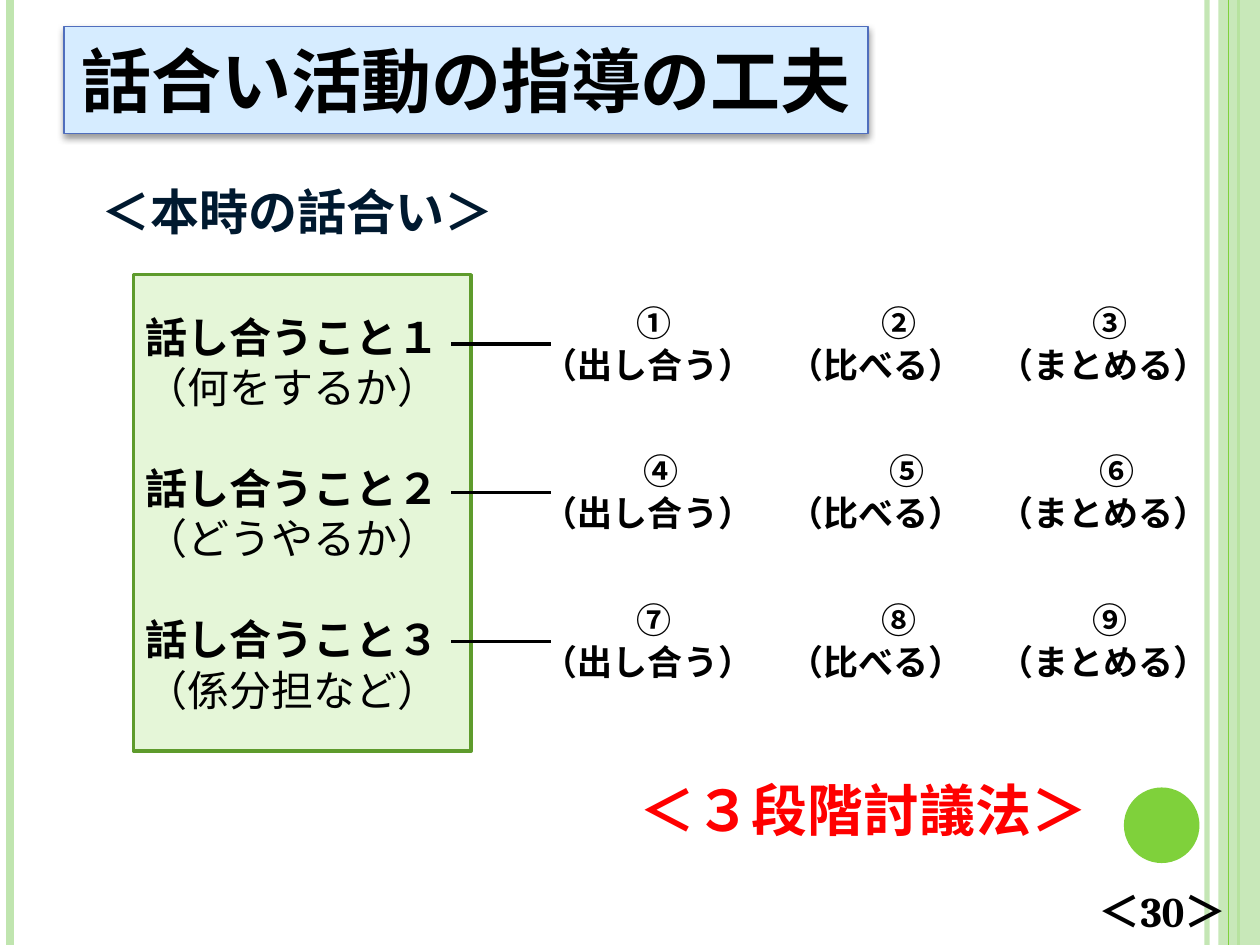
import pptx
import pptx.dml.color
import pptx.enum.shapes
import pptx.enum.text
import pptx.oxml.ns
import pptx.util
from lxml import etree
from pptx.util import Inches, Pt

RGBColor = pptx.dml.color.RGBColor
BLACK = RGBColor(0x00, 0x00, 0x00)
RED = RGBColor(0xFF, 0x00, 0x00)
NAVY = RGBColor(0x00, 0x19, 0x2F)
PALE_GREEN = RGBColor(0xC0, 0xE5, 0xAF)
BRIGHT_GREEN = RGBColor(0x7F, 0xD1, 0x3B)
PANEL_FILL = RGBColor(0xE5, 0xF6, 0xD8)
PANEL_LINE = RGBColor(0x5E, 0x9B, 0x2C)
TITLE_FILL = RGBColor(0xD6, 0xEC, 0xFF)
TITLE_LINE = RGBColor(0x50, 0x6E, 0xBD)

GOTHIC = "Noto Sans CJK JP"
SERIF = "Cambria"
LINE_RATIO = 1.2
SHAPE = pptx.enum.shapes.MSO_SHAPE
MIDDLE = pptx.enum.text.MSO_ANCHOR.MIDDLE
TOP = pptx.enum.text.MSO_ANCHOR.TOP
LEFT = pptx.enum.text.PP_ALIGN.LEFT
CENTER = pptx.enum.text.PP_ALIGN.CENTER

TOPICS = [
    ("話し合うこと１", "（何をするか）"),
    ("話し合うこと２", "（どうやるか）"),
    ("話し合うこと３", "（係分担など）"),
]
STAGES = "（出し合う）\u3000（比べる）\u3000（まとめる）"
STAGE_ROWS = [("①②③", 0), ("④⑤⑥", 0.06), ("⑦⑧⑨", 0)]
STAGE_CENTERS = [0.88, 2.83, 4.5]
ROW_PITCH = 1.18


def add_child(parent, tag, **attributes):
    return etree.SubElement(parent, pptx.oxml.ns.qn(tag), attributes)


def set_opacity(element, percent):
    for color in element.iter(pptx.oxml.ns.qn("a:srgbClr")):
        add_child(color, "a:alpha", val=str(percent * 1000))


def add_line(page, start, end, color, width):
    line = page.shapes.add_connector(
        pptx.enum.shapes.MSO_CONNECTOR.STRAIGHT,
        *[Inches(value) for value in (*start, *end)])
    line.line.color.rgb = color
    line.line.width = Pt(width)
    add_child(line._element.spPr, "a:effectLst")
    return line


def add_block(page, kind, area, fill, line_color=None, line_width=1):
    block = page.shapes.add_shape(kind, *[Inches(value) for value in area])
    block.shadow.inherit = False
    block.fill.solid()
    block.fill.fore_color.rgb = fill
    if line_color is None:
        block.line.fill.background()
    else:
        block.line.color.rgb = line_color
        block.line.width = Pt(line_width)
    return block


def add_shadow(block):
    effects = block._element.spPr.find(pptx.oxml.ns.qn("a:effectLst"))
    shadow = add_child(effects, "a:outerShdw", blurRad=str(Pt(4)),
                       dist=str(Pt(2)), dir="5400000", rotWithShape="0")
    add_child(shadow, "a:srgbClr", val=str(BLACK))
    set_opacity(shadow, 40)


def add_text_box(page, area, anchor=TOP):
    box = page.shapes.add_textbox(*[Inches(value) for value in area])
    box.text_frame.word_wrap = True
    box.text_frame.vertical_anchor = anchor
    return box


def write_paragraph(para, text, size, color=BLACK, bold=True, align=LEFT, font=GOTHIC):
    para.add_run().text = text
    para.alignment = align
    para.line_spacing = Pt(size * LINE_RATIO)
    para.font.name = font
    para.font.size = Pt(size)
    para.font.bold = bold
    para.font.color.rgb = color
    defaults = para._p.pPr.find(pptx.oxml.ns.qn("a:defRPr"))
    add_child(defaults, "a:ea", typeface=GOTHIC)


def add_center_tabs(para, positions):
    defaults = para._p.pPr.find(pptx.oxml.ns.qn("a:defRPr"))
    tabs = etree.Element(pptx.oxml.ns.qn("a:tabLst"))
    for position in positions:
        add_child(tabs, "a:tab", pos=str(Inches(position)), algn="ctr")
    defaults.addprevious(tabs)


def add_label(page, area, text, size, color=BLACK, align=CENTER, font=GOTHIC, anchor=TOP):
    box = add_text_box(page, area, anchor)
    write_paragraph(box.text_frame.paragraphs[0], text, size, color, align=align, font=font)


def add_frame(page):
    edge = add_line(page, (9.58, 0), (9.58, 7.5), PALE_GREEN, 3)
    set_opacity(edge._element.spPr, 93)
    add_line(page, (0.08, 0), (0.08, 7.5), PALE_GREEN, 4.5)
    add_line(page, (9.83, 0), (9.83, 7.5), BRIGHT_GREEN, 1.5)
    band = add_block(page, SHAPE.RECTANGLE, (9.67, 0, 0.33, 7.5), PALE_GREEN)
    set_opacity(band._element.spPr, 87)
    add_line(page, (9.75, 0), (9.75, 7.5), BRIGHT_GREEN, 0.75)
    add_block(page, SHAPE.OVAL, (8.92, 6.25, 0.6, 0.6), BRIGHT_GREEN)


def add_title(page):
    title = add_block(page, SHAPE.RECTANGLE, (0.51, 0.21, 6.38, 0.85),
                      TITLE_FILL, TITLE_LINE)
    add_shadow(title)
    title.text_frame.vertical_anchor = MIDDLE
    write_paragraph(title.text_frame.paragraphs[0], "話合い活動の指導の工夫", 40, align=CENTER)


def add_topic_panel(page):
    panel = add_block(page, SHAPE.RECTANGLE, (1.06, 2.18, 2.68, 3.78),
                      PANEL_FILL, PANEL_LINE, 2)
    frame = panel.text_frame
    frame.vertical_anchor = MIDDLE
    for index, (topic, detail) in enumerate(TOPICS):
        heading = frame.add_paragraph() if index else frame.paragraphs[0]
        write_paragraph(heading, topic, 24)
        if index:
            heading.space_before = Pt(24 * LINE_RATIO)
        write_paragraph(frame.add_paragraph(), detail, 24, bold=False)


def add_stage_row(page, index, numbers, shift):
    offset = index * ROW_PITCH
    add_line(page, (3.58, 2.73 + offset), (4.37, 2.73 + offset), BLACK, 2)
    frame = add_text_box(page, (4.21, 2.34 + offset, 5.51, 0.77)).text_frame
    write_paragraph(frame.paragraphs[0], "".join("\t" + number for number in numbers), 20)
    add_center_tabs(frame.paragraphs[0], [center + shift for center in STAGE_CENTERS])
    write_paragraph(frame.add_paragraph(), STAGES, 20)


def main():
    deck = pptx.Presentation()
    deck.slide_width = Inches(10)
    deck.slide_height = Inches(7.5)
    page = deck.slides.add_slide(deck.slide_layouts[6])
    add_frame(page)
    add_title(page)
    add_topic_panel(page)
    for index, (numbers, shift) in enumerate(STAGE_ROWS):
        add_stage_row(page, index, numbers, shift)
    add_label(page, (0.59, 1.39, 3.54, 0.57), "＜本時の話合い＞", 28, NAVY)
    add_label(page, (4.69, 6.1, 4.33, 0.64), "＜３段階討議法＞", 32, RED, anchor=MIDDLE)
    add_label(page, (8.62, 6.98, 1.42, 0.5), "＜30＞", 24, align=LEFT, font=SERIF)
    deck.save("out.pptx")


if __name__ == "__main__":
    main()
